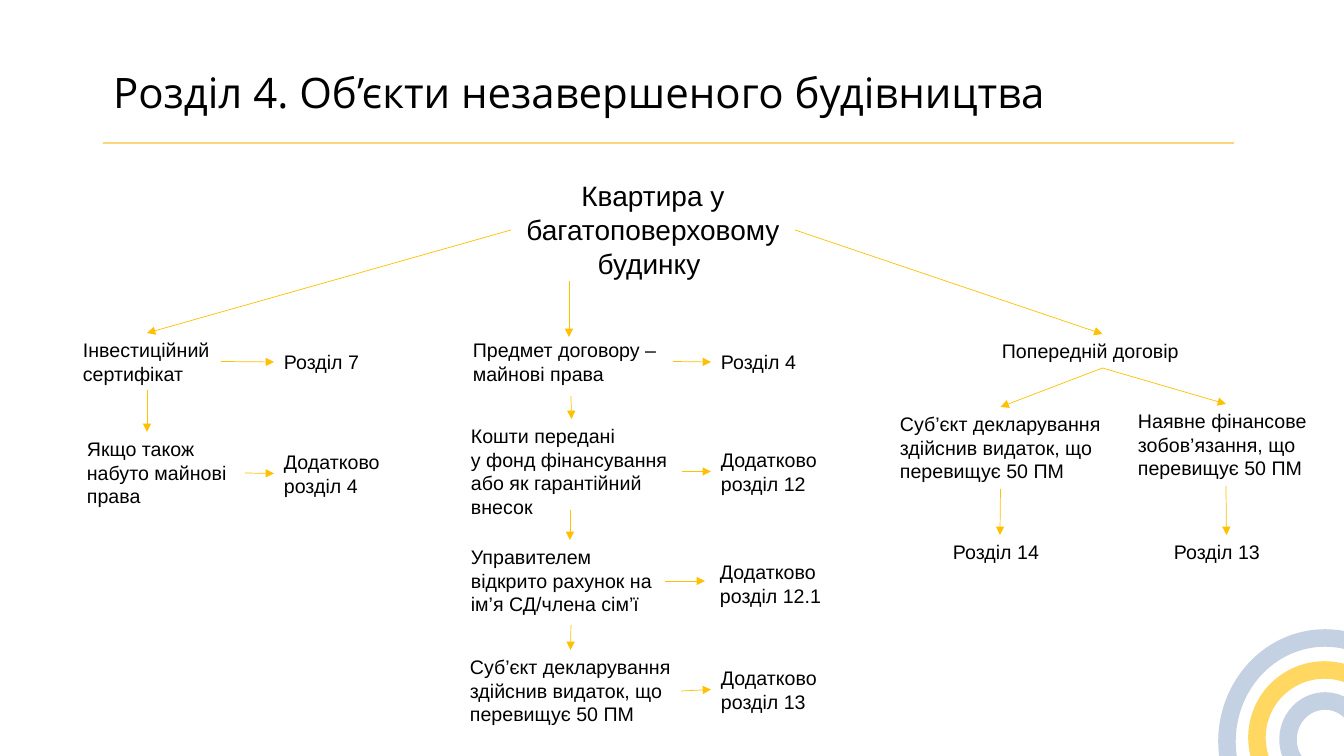
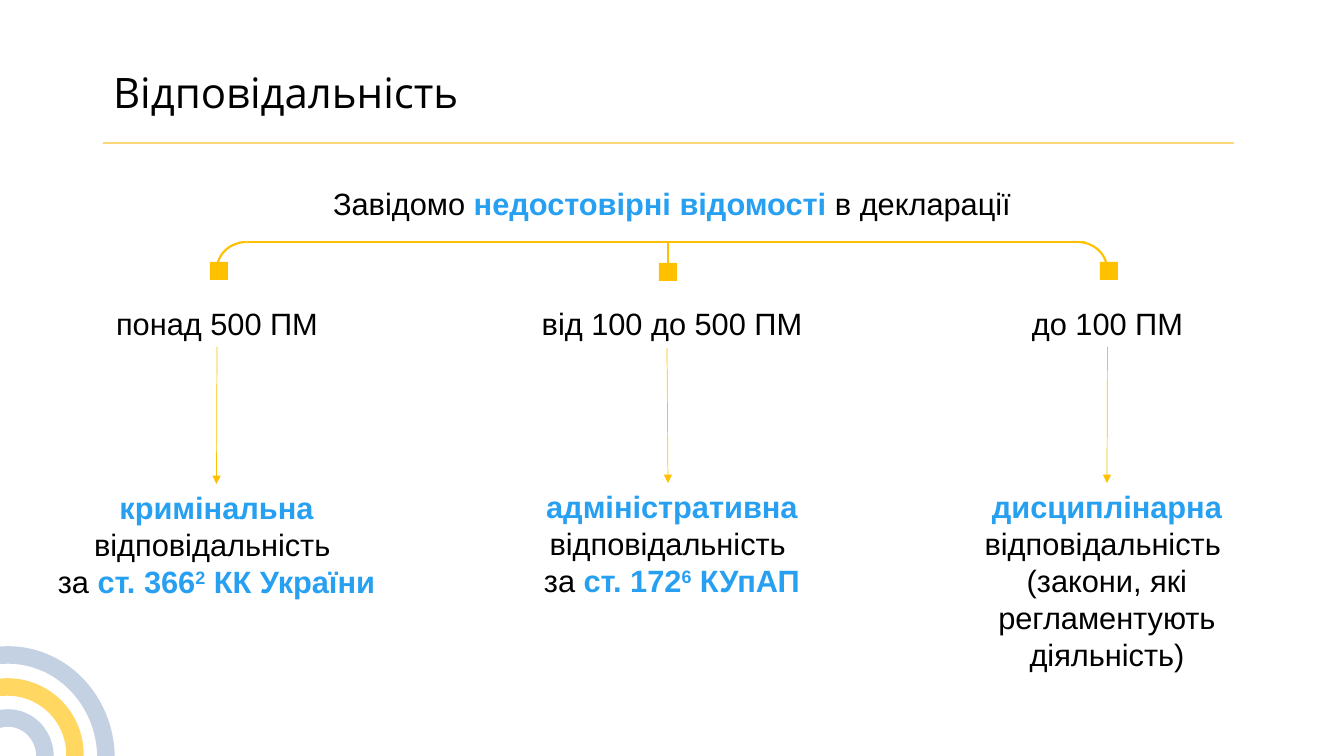
import pptx
import pptx.util
import pptx.dml.color
import pptx.enum.shapes
import pptx.enum.text
import pptx.oxml
import pptx.oxml.ns

SHAPE = pptx.enum.shapes.MSO_SHAPE
ALIGN = pptx.enum.text.PP_ALIGN
ANCHOR = pptx.enum.text.MSO_ANCHOR
FIT = pptx.enum.text.MSO_AUTO_SIZE
RGB = pptx.dml.color.RGBColor.from_string
PX = 914400 / 100.8


class Theme:
    black, gold, rule = "000000", "FFC000", "FBBB1C"
    blue, steel = "27A0F2", "9FB5D2"
    head, body = "Open Sans", "Arial"
    title, root, node, text = 30, 20, 14, 22
    # line kinds: colour, width, opacity, arrowhead
    pens = {
        "rule": (rule, 1, 90, False),
        "arrow": (gold, 0.5, 100, True),
        "bar": (gold, 1.5, 100, False),
        "steel": (steel, 12.5, 62, False),
        "ring": (gold, 12.5, 62, False),
    }


def pen(shape, kind):
    """Outline a shape or connector without a shadow."""
    color, width, clear, arrow = Theme.pens[kind]
    shape.line.color.rgb = RGB(color)
    shape.line.width = pptx.util.Pt(width)
    box = shape._element.spPr
    qn, sub = pptx.oxml.ns.qn, pptx.oxml.parse_xml
    space = pptx.oxml.ns.nsdecls("a")
    line = box.find(qn("a:ln"))
    if clear < 100:
        tone = line.find(".//" + qn("a:srgbClr"))
        tone.append(sub(f'<a:alpha {space} val="{clear * 1000}"/>'))
    if arrow:
        line.append(sub(f'<a:tailEnd {space} type="triangle"/>'))
    box.append(sub(f"<a:effectLst {space}/>"))


def write(shape, paras, size, align=ALIGN.LEFT, font=Theme.body):
    """Fill a shape with paragraphs made of (words, style) runs."""
    frame = shape.text_frame
    frame.word_wrap = True
    frame.auto_size = FIT.NONE
    frame.vertical_anchor = ANCHOR.TOP
    for i, runs in enumerate(paras):
        para = frame.add_paragraph() if i else frame.paragraphs[0]
        para.alignment = align
        for words, style in runs:
            for j, part in enumerate(words.split("\n")):
                if j:
                    para.add_line_break()
                run = para.add_run()
                run.text = part
                run.font.name = font
                run.font.size = pptx.util.Pt(size)
                run.font.bold = style != "plain"
                color = Theme.black if style == "plain" else Theme.blue
                run.font.color.rgb = RGB(color)
                if style == "super":
                    run._r.get_or_add_rPr().set("baseline", "30000")


deck = pptx.Presentation()
deck.slide_width = round(1344 * PX)
deck.slide_height = round(756 * PX)

# Shared frame: rings, title and rule
pages, links = [], []
for title, left, top in (
    ("Розділ 4. Об’єкти незавершеного будівництва", 1227, 638),
    ("Відповідальність", -90, 655),
):
    page = deck.slides.add_slide(deck.slide_layouts[5])
    pages.append(page)
    for x, y, w, h, kind in (
        (0, 0, 196, 207, "steel"),
        (30, 32, 135, 135, "ring"),
        (61, 63, 74, 77, "steel"),
    ):
        at = [round(n * PX) for n in (left + x, top + y, w, h)]
        ring = page.shapes.add_shape(SHAPE.OVAL, *at)
        ring.fill.background()
        pen(ring, kind)
    name = page.shapes.title
    name.left, name.top, name.width, name.height = [
        round(n * PX) for n in (103, 61, 1058, 61)]
    write(name, [[(title, "plain")]], Theme.title, font=Theme.head)
    links.append((page, (1234, 143), (103, 143), "rule"))

tree, duty = pages

# Slide 1: decision tree
spend = "Суб’єкт декларування здійснив видаток, що перевищує 50 ПМ"
nodes = {
    "root": (511, 174, 284, 112, "Квартира у багатоповерховому будинку "),
    "deal": (463, 333, 210, 57, "Предмет договору – майнові права"),
    "prior": (992, 334, 221, 34, "Попередній договір"),
    "fund": (461, 419, 221, 105,
             "Кошти передані \nу фонд фінансування або як гарантійний внесок"),
    "bank": (461, 540, 204, 82,
             "Управителем відкрито рахунок на ім’я СД/члена сім’ї"),
    "debt": (1128, 404, 196, 82,
             "Наявне фінансове зобов’язання, що перевищує 50 ПМ"),
    "cert": (73, 333, 148, 57, "Інвестиційний сертифікат"),
    "part 7": (274, 345, 221, 34, "Розділ 7"),
    "also 12": (711, 443, 168, 57, "Додатково розділ 12"),
    "also 12.1": (710, 555, 168, 57, "Додатково розділ 12.1"),
    "also 13": (711, 661, 168, 57, "Додатково розділ 13"),
    "rights": (77, 432, 168, 82, "Якщо також набуто майнові права"),
    "also 4": (274, 445, 120, 57, "Додатково", "розділ 4"),
    "part 4": (711, 345, 102, 34, "Розділ 4"),
    "spend": (890, 407, 221, 82, spend),
    "part 14": (943, 535, 114, 34, "Розділ 14"),
    "part 13": (1164, 535, 125, 34, "Розділ 13"),
    "paid": (460, 650, 221, 82, spend),
}
boxes = {}
for key, (x, y, w, h, *paras) in nodes.items():
    box = tree.shapes.add_textbox(*[round(n * PX) for n in (x, y, w, h)])
    top = key == "root"
    write(box, [[(words, "plain")] for words in paras],
          Theme.root if top else Theme.node,
          ALIGN.CENTER if top else ALIGN.LEFT)
    boxes[key] = box

# An end is either a point or a box with its side
for start, end in (
    (("root", 1), ("cert", 0)),
    (("root", 3), ("prior", 0)),
    ((569, 281), (569, 337)),
    (("cert", 2), (147, 432)),
    (("cert", 3), ("part 7", 1)),
    (("rights", 3), ("also 4", 1)),
    ((571, 396), ("fund", 0)),
    (("deal", 3), ("part 4", 1)),
    (("prior", 2), ("spend", 0)),
    (("prior", 2), ("debt", 0)),
    (("spend", 2), ("part 14", 0)),
    (("debt", 2), ("part 13", 0)),
    (("fund", 3), ("also 12", 1)),
    (("bank", 3), (705, 581)),
    (("paid", 3), ("also 13", 1)),
    ((571, 625), ("paid", 0)),
    ((570, 510), (570, 540)),
):
    links.append((tree, start, end, "arrow"))

# Slide 2: false data and liability
for key, x, y, w, h, paras in (
    ("lead", 290, 180, 764, 47, [[
        ("Завідомо ", "plain"), ("недостовірні відомості ", "bold"),
        ("в декларації", "plain")]]),
    ("high", 59, 300, 316, 47, [[("понад 500 ПМ", "plain")]]),
    ("mid", 514, 300, 316, 47, [[("від 100 до 500 ПМ", "plain")]]),
    ("low", 920, 300, 375, 47, [[("до 100 ПМ", "plain")]]),
    ("crime", 25, 484, 383, 122, [[
        ("кримінальна ", "bold"), ("відповідальність \nза ", "plain"),
        ("ст. 366", "bold"), ("2", "super"), (" КК України", "bold")]]),
    ("fine", 506, 483, 332, 122, [[
        ("адміністративна ", "bold"), ("відповідальність \nза ", "plain"),
        ("ст. 172", "bold"), ("6", "super"), (" КУпАП", "bold")]]),
    ("staff", 941, 483, 332, 197, [
        [("дисциплінарна ", "bold"), ("відповідальність ", "plain")],
        [("(закони, які регламентують діяльність)", "plain")]]),
):
    box = duty.shapes.add_textbox(*[round(n * PX) for n in (x, y, w, h)])
    write(box, paras, Theme.text, ALIGN.CENTER)
    boxes[key] = box

# Bracket with rounded ends and square feet
for x, start, end in ((217, 108, 162), (1048, 162, 0)):
    at = [round(n * PX) for n in (x, 242, 59, 54)]
    arc = duty.shapes.add_shape(SHAPE.ARC, *at)
    arc.adjustments[0], arc.adjustments[1] = start, end
    arc.fill.background()
    pen(arc, "bar")
for key, x, y in (("foot 1", 210, 262), ("foot 2", 659, 263),
                  ("foot 3", 1100, 262)):
    at = [round(n * PX) for n in (x, y, 18, 18)]
    foot = duty.shapes.add_shape(SHAPE.RECTANGLE, *at)
    foot.fill.solid()
    foot.fill.fore_color.rgb = RGB(Theme.gold)
    foot.line.fill.background()
    foot.shadow.inherit = False
    boxes[key] = foot

links += [
    (duty, (247, 242), (1085, 242), "bar"),
    (duty, ("foot 2", 0), (668, 243), "bar"),
    (duty, ("high", 2), ("crime", 0), "arrow"),
    (duty, (667, 348), (668, 483), "arrow"),
    (duty, ("low", 2), ("staff", 0), "arrow"),
]

# Connectors of both slides
for page, start, end, kind in links:
    spots = [round(n * PX) if isinstance(p[0], int) else 0
             for p in (start, end) for n in (p if isinstance(p[0], int) else (0, 0))]
    link = page.shapes.add_connector(
        pptx.enum.shapes.MSO_CONNECTOR.STRAIGHT, *spots)
    for spot, join in ((start, link.begin_connect), (end, link.end_connect)):
        if spot[0] in boxes:
            join(boxes[spot[0]], spot[1])
    pen(link, kind)

deck.save("out.pptx")
